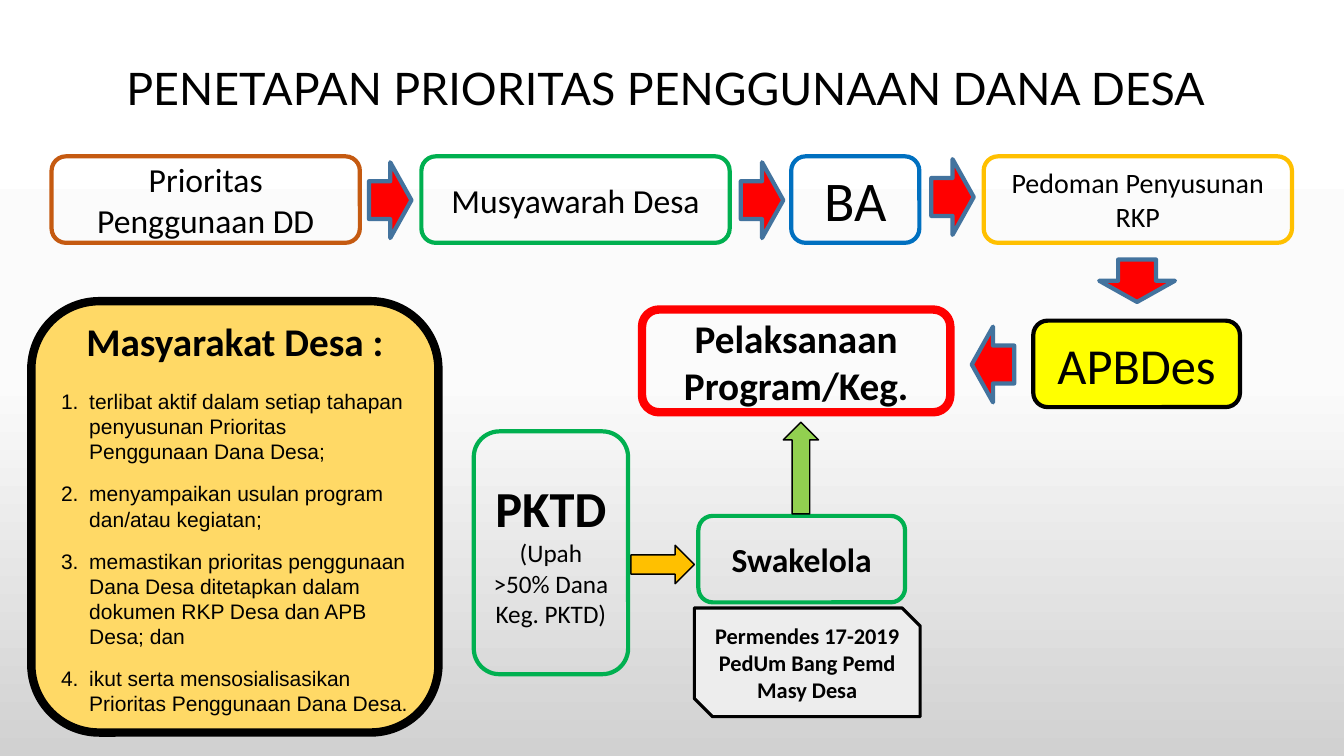
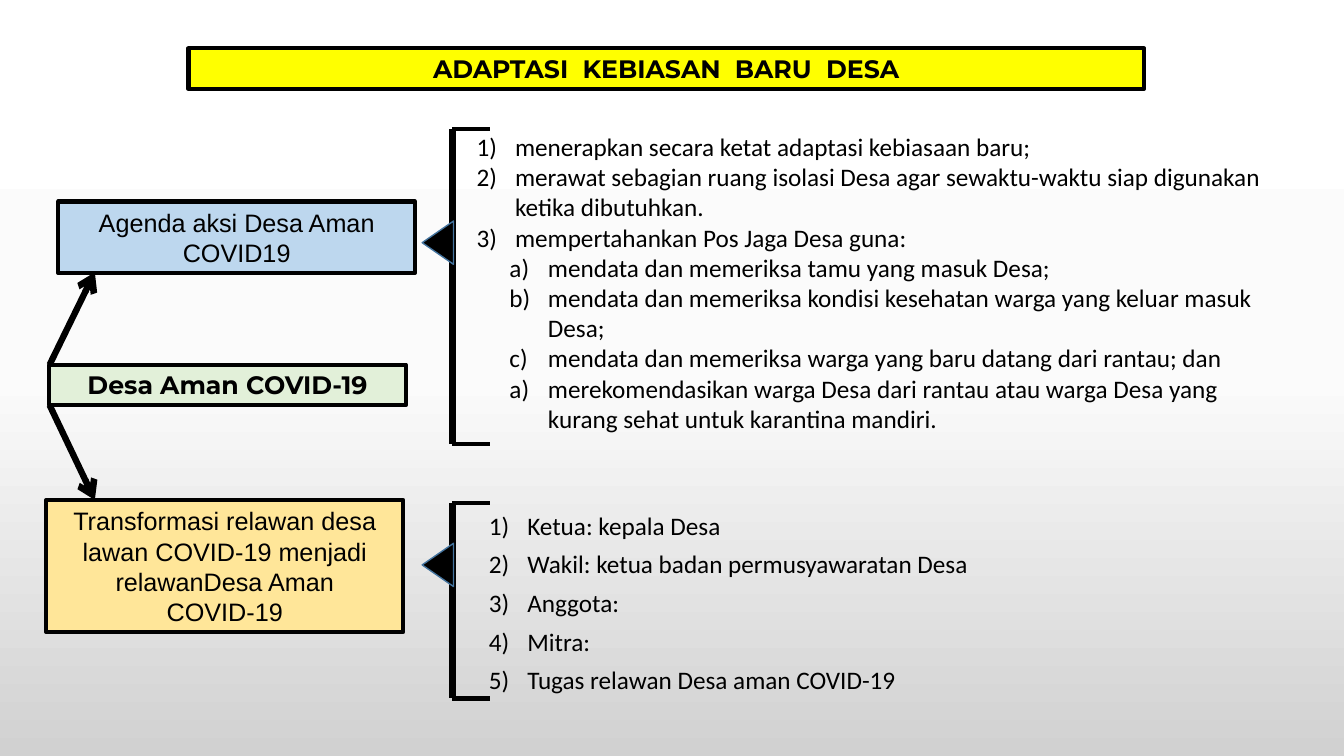
"""Build two slides on village fund priorities and the COVID-19 safe village."""
import copy
from dataclasses import dataclass
from typing import Optional

import pptx
import pptx.dml.color
import pptx.enum.shapes
import pptx.enum.text
import pptx.oxml
import pptx.util

Cm = pptx.util.Cm
Pt = pptx.util.Pt
Preset = pptx.enum.shapes.MSO_SHAPE
Align = pptx.enum.text.PP_ALIGN

COLORS = {
    "black": "000000", "white": "FFFFFF", "mist": "FBFBFB", "silver": "D1D1D1",
    "rust": "C55A11", "green": "00B050", "amber": "FFC000", "blue": "0070C0",
    "red": "FF0000", "steel": "43739E", "yellow": "FFFF00", "gold": "FFD966",
    "lime": "92D050", "ash": "EDEDED", "mint": "E2F0D9", "sand": "FFE699", "sky": "BDD7EE",
}
BACKDROP = (("white", 0), ("mist", 50), ("silver", 100))
FLOW_TOP, STEP_WIDTH, STEP_HEIGHT = 3.94, 7.77, 2.18
SPINE_X, TICK = 11.4, 0.96


@dataclass(frozen=True)
class Box:
    left: float
    top: float
    width: float
    height: float
    line: str
    text: str = ""
    size: float = 18
    bold: bool = False
    font: str = "Calibri"
    fill: Optional[str] = None
    weight: float = 3
    preset: Preset = Preset.ROUNDED_RECTANGLE
    turn: float = 0


@dataclass(frozen=True)
class Bracket:
    top: float
    bottom: float
    pointer_top: float


def step(left: float, line: str, text: str, size: float, width: float = STEP_WIDTH) -> Box:
    """Describe one step of the top row."""
    return Box(left, FLOW_TOP, width, STEP_HEIGHT, line, text, size)


def flow_arrow(left: float, top: float, turn: float = 0) -> Box:
    """Describe one red arrow between steps."""
    return Box(left, top, 1.07, 1.91, "steel", fill="red", preset=Preset.RIGHT_ARROW, turn=turn)


def panel(left: float, top: float, width: float, height: float, fill: str, text: str,
          font: str = "Arial", bold: bool = False) -> Box:
    """Describe one black-edged rectangle."""
    return Box(left, top, width, height, "black", text, bold=bold, font=font, fill=fill,
               preset=Preset.RECTANGLE)


COMMUNITY = Box(0.79, 7.59, 10.26, 10.87, "black", fill="gold", weight=6)
PKTD = Box(11.94, 10.87, 3.89, 6.12, "green")
PRIORITY_BOXES = (
    step(1.3, "rust", "Prioritas Penggunaan DD", 24),
    step(10.62, "green", "Musyawarah Desa", 24),
    step(24.79, "amber", "Pedoman Penyusunan RKP", 20),
    step(19.94, "blue", "BA", 40, width=3.23),
    flow_arrow(9.3, 4.09),
    flow_arrow(18.67, 4.09),
    flow_arrow(23.47, 4.01),
    Box(26.04, 8.08, 5.21, STEP_HEIGHT, "black", "APBDes", 36, fill="yellow"),
    flow_arrow(28.12, 6.12, turn=90),
    Box(16.18, 7.8, STEP_WIDTH, 2.59, "red", "Pelaksanaan Program/Keg.", 28, True, weight=6),
    flow_arrow(24.49, 8.23, turn=180),
    Box(17.6, 13, 5.21, STEP_HEIGHT, "green", "Swakelola", 24, True),
    Box(19.74, 10.64, 0.89, 2.31, "black", fill="lime", weight=1, preset=Preset.UP_ARROW),
    Box(15.9, 13.74, 1.6, 0.97, "black", fill="amber", weight=1, preset=Preset.RIGHT_ARROW),
    Box(17.5, 15.32, 5.69, 2.74, "black", "Permendes 17-2019 PedUm Bang Pemd Masy Desa", 16, True,
        fill="ash", weight=2.25, preset=Preset.SNIP_2_DIAG_RECTANGLE),
)
COMMUNITY_ROLES = (
    "terlibat aktif dalam setiap tahapan penyusunan Prioritas Penggunaan Dana Desa;",
    "menyampaikan usulan program dan/atau kegiatan;",
    "memastikan prioritas penggunaan Dana Desa ditetapkan dalam dokumen RKP Desa dan APB Desa; dan",
    "ikut serta mensosialisasikan Prioritas Penggunaan Dana Desa.",
)
ADAPTATION_PANELS = (
    panel(4.75, 1.22, 24.08, 1.02, "yellow", "ADAPTASI  KEBIASAN  BARU  DESA", "Montserrat", True),
    panel(1.24, 9.19, 8.99, 1.02, "mint", "Desa Aman COVID-19", "Montserrat", True),
    panel(1.17, 12.6, 8.99, 3.33, "sand",
          "Transformasi relawan desa lawan COVID-19 menjadi relawanDesa Aman COVID-19"),
    panel(1.47, 5.08, 8.99, 1.8, "sky", "Agenda aksi Desa Aman COVID19"),
)
AGENDA = (
    "menerapkan secara ketat adaptasi kebiasaan baru;",
    "merawat sebagian ruang isolasi Desa agar sewaktu-waktu siap digunakan ketika dibutuhkan.",
)
GUARD_POST = "mempertahankan Pos Jaga Desa guna:"
GUARD_DUTIES = (
    "mendata dan memeriksa tamu yang masuk Desa;",
    "mendata dan memeriksa kondisi kesehatan warga yang keluar masuk Desa;",
    "mendata dan memeriksa warga yang baru datang dari rantau; dan",
)
QUARANTINE = ("merekomendasikan warga Desa dari rantau atau warga Desa yang kurang sehat "
              "untuk karantina mandiri.")
VOLUNTEERS = (
    "Ketua: kepala Desa",
    "Wakil: ketua badan permusyawaratan Desa",
    "Anggota:",
    "Mitra:",
    "Tugas relawan Desa aman COVID-19",
)
BRACKETS = (Bracket(3.25, 11.18, 5.72), Bracket(12.67, 17.6, 13.84))


def rgb(name: str) -> pptx.dml.color.RGBColor:
    """Return the named colour."""
    return pptx.dml.color.RGBColor.from_string(COLORS[name])


def write(shape, *texts: str, size: float = 18, font: str = "Calibri", bold: bool = False,
          align: Align = Align.LEFT, after: float = 0, numbering: str = "", start: int = 1,
          margin: float = 0, hanging: float = 0.97, level: int = 0) -> None:
    """Append one paragraph per text, numbered if asked."""
    frame = shape.text_frame
    frame.word_wrap = True
    for text in texts:
        paragraph = frame.paragraphs[0] if not frame.text else frame.add_paragraph()
        paragraph.alignment, paragraph.level = align, level
        paragraph.space_after = Pt(after)
        run = paragraph.add_run()
        run.text = text
        run.font.size, run.font.name, run.font.bold = Pt(size), font, bold
        run.font.color.rgb = rgb("black")
        if numbering:
            properties = paragraph._p.get_or_add_pPr()
            properties.set("marL", str(Cm(margin)))
            properties.set("indent", str(-Cm(hanging)))
            bullet = properties.makeelement(pptx.oxml.ns.qn("a:buAutoNum"), {"type": numbering})
            if start > 1:
                bullet.set("startAt", str(start))
            properties.append(bullet)


def draw_box(slide, box: Box):
    """Draw a box with its centred text."""
    shape = slide.shapes.add_shape(box.preset, Cm(box.left), Cm(box.top),
                                   Cm(box.width), Cm(box.height))
    shape.shadow.inherit = False
    shape.rotation = box.turn
    if box.fill:
        shape.fill.solid()
        shape.fill.fore_color.rgb = rgb(box.fill)
    else:
        shape.fill.background()
    shape.line.color.rgb = rgb(box.line)
    shape.line.width = Pt(box.weight)
    if box.text:
        write(shape, box.text, size=box.size, font=box.font, bold=box.bold, align=Align.CENTER)
    return shape


def draw_line(slide, x1: float, y1: float, x2: float, y2: float, weight: float,
              arrow: bool = False) -> None:
    """Draw a straight black line, with an arrowhead at its end if asked."""
    line = slide.shapes.add_connector(pptx.enum.shapes.MSO_CONNECTOR.STRAIGHT,
                                      Cm(x1), Cm(y1), Cm(x2), Cm(y2))
    line.line.color.rgb = rgb("black")
    line.line.width = Pt(weight)
    qn = pptx.oxml.ns.qn
    properties = line._element.spPr
    if arrow:
        outline = line.line._get_or_add_ln()
        outline.append(outline.makeelement(qn("a:tailEnd"), {"type": "arrow"}))
    properties.append(properties.makeelement(qn("a:effectLst"), {}))


def draw_bracket(slide, bracket: Bracket) -> None:
    """Draw a left bracket with its pointer."""
    draw_line(slide, SPINE_X, bracket.top, SPINE_X, bracket.bottom, 4.5)
    for y in (bracket.top, bracket.bottom):
        draw_line(slide, SPINE_X, y, SPINE_X + TICK, y, 3)
    draw_box(slide, Box(10.49, bracket.pointer_top, 1.09, 0.79, "steel", fill="black", weight=1,
                        preset=Preset.ISOSCELES_TRIANGLE, turn=270))


def text_box(slide, left: float, top: float, width: float, height: float):
    """Add an empty text box."""
    return slide.shapes.add_textbox(Cm(left), Cm(top), Cm(width), Cm(height))


def paint_backdrop(master) -> None:
    """Give every slide the same vertical gradient."""
    fill = master.background.fill
    fill.gradient()
    fill.gradient_angle = 270
    first = fill.gradient_stops[0]._gs
    first.addnext(copy.deepcopy(first))
    for stop, (color, percent) in zip(fill.gradient_stops, BACKDROP):
        stop.color.rgb = rgb(color)
        stop.position = percent / 100


def build_priorities(slide) -> None:
    """Draw the flow that sets village fund priorities."""
    title = text_box(slide, 1.37, 1.4, 30.84, 1.63)
    write(title, "PENETAPAN PRIORITAS PENGGUNAAN DANA DESA", size=32, font="Lato",
          align=Align.CENTER)
    for box in PRIORITY_BOXES:
        draw_box(slide, box)
    community = draw_box(slide, COMMUNITY)
    write(community, "Masyarakat Desa :", size=28, bold=True, align=Align.CENTER, after=17)
    write(community, *COMMUNITY_ROLES, size=15, font="Arial", after=12,
          numbering="arabicPeriod", margin=0.71, hanging=0.71, level=1)
    pktd = draw_box(slide, PKTD)
    write(pktd, "PKTD", size=36, bold=True, align=Align.CENTER)
    write(pktd, "(Upah >50% Dana Keg. PKTD)", align=Align.CENTER)


def build_adaptation(slide) -> None:
    """Draw the agenda and the volunteers of the safe village."""
    for box in ADAPTATION_PANELS:
        draw_box(slide, box)
    agenda = text_box(slide, 11.76, 3.18, 20.96, 7.95)
    write(agenda, *AGENDA, numbering="arabicParenR", margin=0.97)
    write(agenda, GUARD_POST, numbering="arabicParenR", start=3, margin=0.97, level=1)
    write(agenda, *GUARD_DUTIES, numbering="alphaLcParenR", margin=1.8, level=3)
    write(agenda, QUARANTINE, numbering="alphaLcParenR", margin=1.8)
    volunteers = text_box(slide, 12.07, 12.73, 19.2, 4.95)
    write(volunteers, *VOLUNTEERS, after=6, numbering="arabicParenR", margin=0.97, level=2)
    for start_y, end_y in ((9.19, 6.86), (10.21, 12.6)):
        draw_line(slide, 1.25, start_y, 2.39, end_y, 4.5, arrow=True)
    for bracket in BRACKETS:
        draw_bracket(slide, bracket)


def main() -> None:
    """Build and save the presentation."""
    deck = pptx.Presentation()
    deck.slide_width, deck.slide_height = Cm(33.87), Cm(19.05)
    paint_backdrop(deck.slide_master)
    for build in (build_priorities, build_adaptation):
        build(deck.slides.add_slide(deck.slide_layouts[6]))
    deck.save("out.pptx")


if __name__ == "__main__":
    main()
